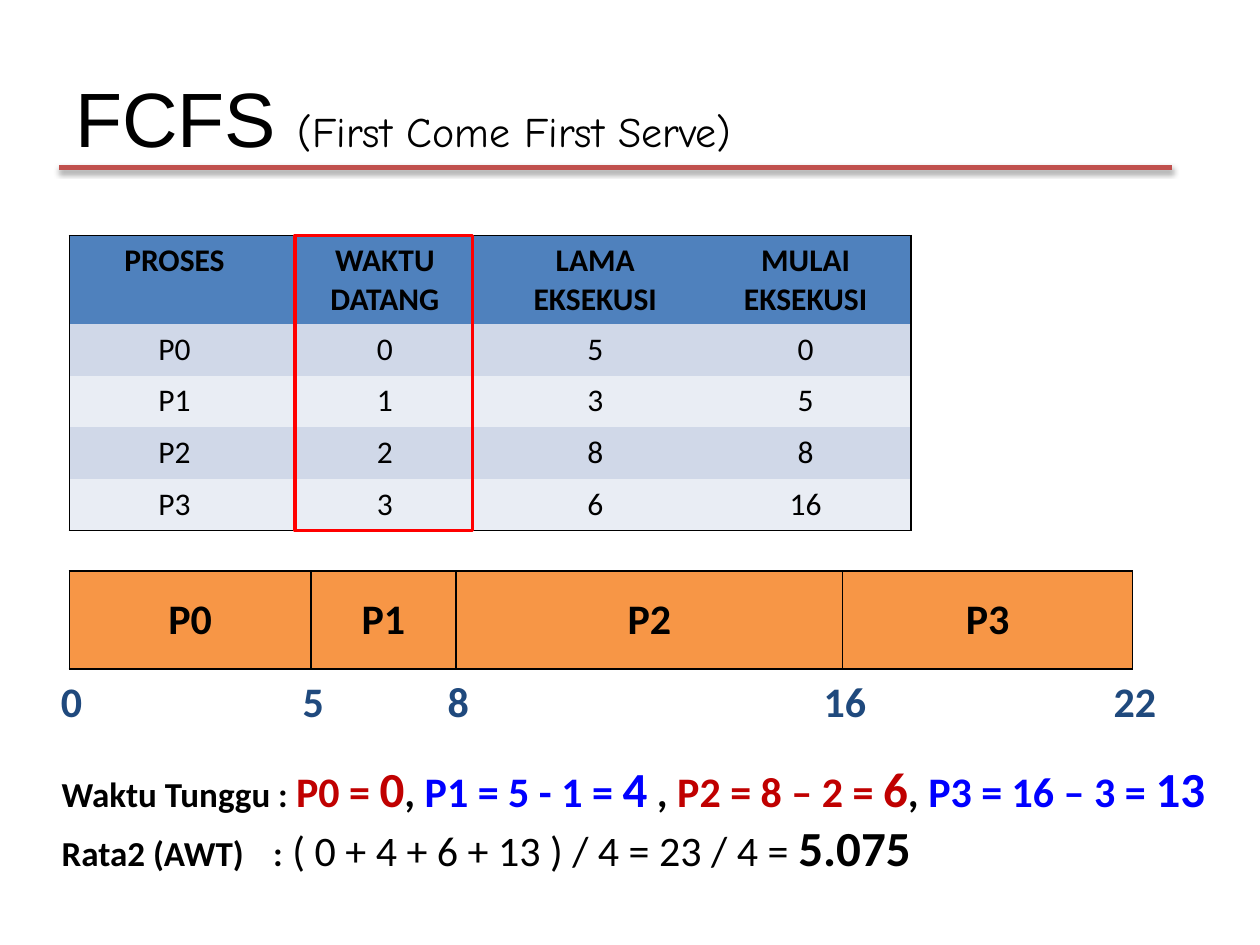
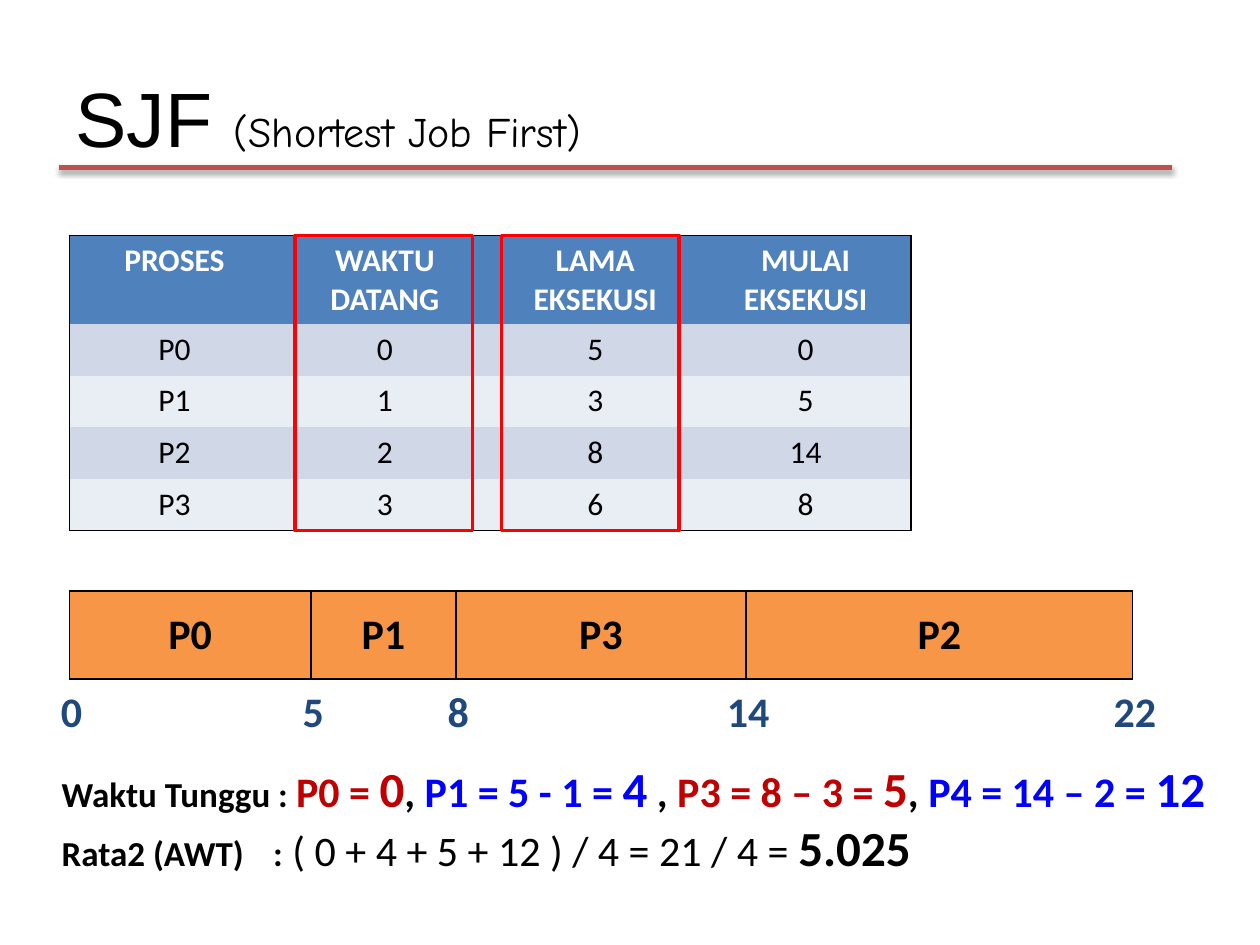
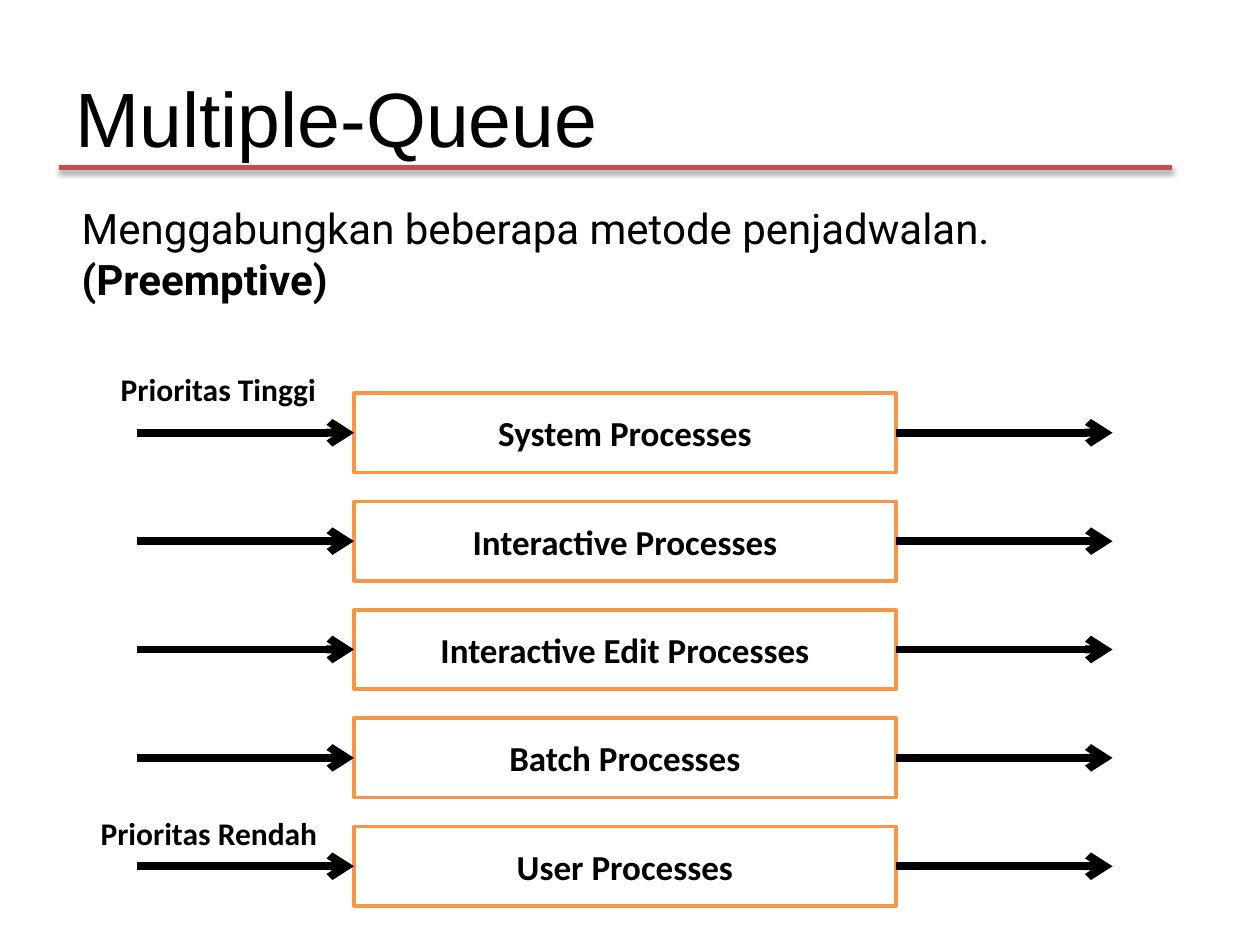
from itertools import accumulate

from lxml import etree
from pptx import Presentation
from pptx.dml.color import RGBColor
from pptx.enum.shapes import MSO_CONNECTOR, MSO_SHAPE
from pptx.enum.text import MSO_ANCHOR, PP_ALIGN
from pptx.oxml.ns import qn
from pptx.util import Inches, Pt

RECTANGLE = MSO_SHAPE.RECTANGLE
STRAIGHT = MSO_CONNECTOR.STRAIGHT
LEFT, CENTER = PP_ALIGN.LEFT, PP_ALIGN.CENTER
TOP, MIDDLE = MSO_ANCHOR.TOP, MSO_ANCHOR.MIDDLE

BLACK, WHITE = "000000", "FFFFFF"
RULE_RED, MARK_RED, WAIT_RED = "C0504D", "FF0000", "C00000"
HEADER_BLUE, TICK_BLUE, WAIT_BLUE = "4F81BD", "1F497D", "0000FF"
BANDS = ("D0D8E8", "E9EDF4")
ORANGE = "F79646"
BODY = "Calibri"

MARGIN = 0.55
TABLE_TOP = 1.87
HEADER_H, ROW_H, COLUMN_W = 0.7, 0.41, 1.67
GANTT_W = 8.44
HEADINGS = ("PROSES", "WAKTU DATANG", "LAMA EKSEKUSI", "MULAI EKSEKUSI")


def rgb(value):
    return RGBColor.from_string(value)


def add_run(paragraph, text, size, color=BLACK, bold=False, font=BODY):
    run = paragraph.add_run()
    run.text = text
    run.font.name = font
    run.font.size = Pt(size)
    run.font.bold = bold
    run.font.color.rgb = rgb(color)


def fill_frame(frame, paragraphs, align=LEFT, anchor=TOP):
    frame.vertical_anchor = anchor
    for index, runs in enumerate(paragraphs):
        paragraph = frame.add_paragraph() if index else frame.paragraphs[0]
        paragraph.alignment = align
        for run in runs:
            add_run(paragraph, *run)


def add_text(slide, box, paragraphs, wrap=True, anchor=TOP):
    label = slide.shapes.add_textbox(*map(Inches, box))
    label.text_frame.word_wrap = wrap
    fill_frame(label.text_frame, paragraphs, anchor=anchor)
    return label


def add_box(slide, box, line, fill=None):
    rect = slide.shapes.add_shape(RECTANGLE, *map(Inches, box))
    rect.shadow.inherit = False
    rect.line.color.rgb = rgb(line)
    rect.line.width = Pt(2)
    if fill:
        rect.fill.solid()
        rect.fill.fore_color.rgb = rgb(fill)
    else:
        rect.fill.background()
    return rect


def add_line(slide, start, end, color, width):
    line = slide.shapes.add_connector(STRAIGHT, *map(Inches, start + end))
    line.line.color.rgb = rgb(color)
    line.line.width = Pt(width)
    effects = etree.SubElement(line.element.spPr, qn("a:effectLst"))
    return line, effects


def add_arrow(slide, left, right, y):
    arrow, _ = add_line(slide, (left, y), (right, y), BLACK, 4.5)
    outline = arrow.element.spPr.find(qn("a:ln"))
    etree.SubElement(outline, qn("a:tailEnd"), type="arrow")


def add_title(slide, title, subtitle=""):
    runs = [(title, 44, BLACK, False, "Arial")]
    if subtitle:
        runs.append((subtitle, 24, BLACK, False, "Comic Neue"))
    add_text(slide, (0.5, 0.3, 9, 1.25), [runs], anchor=MIDDLE)
    _, effects = add_line(slide, (0.47, 1.33), (9.3, 1.33), RULE_RED, 3)
    shadow = etree.SubElement(effects, qn("a:outerShdw"), blurRad="40000",
                              dist="23000", dir="5400000", rotWithShape="0")
    tint = etree.SubElement(shadow, qn("a:srgbClr"), val=BLACK)
    etree.SubElement(tint, qn("a:alpha"), val="35000")


def style_cell(cell, fill, sides):
    properties = cell._tc.get_or_add_tcPr()
    for side in "LRTB":
        border = etree.SubElement(properties, qn("a:ln" + side), w=str(Pt(1)))
        if side in sides:
            paint = etree.SubElement(border, qn("a:solidFill"))
            etree.SubElement(paint, qn("a:srgbClr"), val=BLACK)
        else:
            etree.SubElement(border, qn("a:noFill"))
    cell.fill.solid()
    cell.fill.fore_color.rgb = rgb(fill)


def add_grid(slide, left, top, widths, heights):
    box = (left, top, sum(widths), sum(heights))
    grid = slide.shapes.add_table(len(heights), len(widths), *map(Inches, box)).table
    grid.first_row = grid.horz_banding = False
    for column, width in zip(grid.columns, widths):
        column.width = Inches(width)
    for row, height in zip(grid.rows, heights):
        row.height = Inches(height)
    return grid


def add_process_table(slide, processes, heading_color):
    rows = [HEADINGS] + processes
    last_row, last_column = len(rows) - 1, len(HEADINGS) - 1
    heights = [HEADER_H] + [ROW_H] * len(processes)
    grid = add_grid(slide, MARGIN, TABLE_TOP, [COLUMN_W] * len(HEADINGS), heights)
    for r, values in enumerate(rows):
        fill = BANDS[(r - 1) % 2] if r else HEADER_BLUE
        color = BLACK if r else heading_color
        for c, value in enumerate(values):
            sides = (("L" if c == 0 else "") + ("R" if c == last_column else "")
                     + ("T" if r == 0 else "") + ("B" if r == last_row else ""))
            cell = grid.cell(r, c)
            style_cell(cell, fill, sides)
            fill_frame(cell.text_frame, [[(str(value), 18, color, r == 0)]], CENTER)


def mark_column(slide, left):
    add_box(slide, (left, TABLE_TOP, 1.41, 2.34), MARK_RED)


def add_gantt(slide, top, height, bursts):
    ticks = [0] + list(accumulate(duration for _, duration in bursts))
    unit = GANTT_W / ticks[-1]
    widths = [duration * unit for _, duration in bursts]
    grid = add_grid(slide, MARGIN, top, widths, [height])
    for c, (process, _) in enumerate(bursts):
        cell = grid.cell(0, c)
        style_cell(cell, ORANGE, "LRTB")
        fill_frame(cell.text_frame, [[(process, 24, BLACK, True)]], CENTER)
        cell.vertical_anchor = MIDDLE
    for tick in ticks:
        width = 0.2 + 0.17 * len(str(tick))
        left = MARGIN + 0.02 + tick * unit - width / 2
        add_text(slide, (left, top + height, width, 0.5),
                 [[(str(tick), 24, TICK_BLUE, True)]], wrap=False)


def add_waiting_times(slide, waits, average_sum, average):
    waiting = [("Waktu Tunggu : ", 20, BLACK, True)]
    for index, (formula, result) in enumerate(waits):
        color = (WAIT_RED, WAIT_BLUE)[index % 2]
        if index:
            waiting.append((" , " if index == 2 else ", ", 24, BLACK, True))
        waiting += [(formula, 24, color, True), (result, 28, color, True)]
    mean = [("Rata2 (AWT)\t:", 20, BLACK, True), (average_sum, 24), (average, 28, BLACK, True)]
    label = add_text(slide, (0.39, 5.97, 9.38, 1.04), [waiting, mean])
    properties = label.text_frame.paragraphs[1]._p.get_or_add_pPr()
    tabs = etree.SubElement(properties, qn("a:tabLst"))
    etree.SubElement(tabs, qn("a:tab"), pos=str(Inches(1.68)), algn="l")


def add_queue(slide, top, process):
    left, width, height, reach = 2.81, 4.3, 0.63, 1.72
    queue = add_box(slide, (left, top, width, height), ORANGE, WHITE)
    fill_frame(queue.text_frame, [[(process, 20, BLACK, True)]], CENTER, MIDDLE)
    right, middle = left + width, top + height / 2
    add_arrow(slide, left - reach, left, middle)
    add_arrow(slide, right, right + reach, middle)


def build_fcfs(slide):
    add_title(slide, "FCFS ", "(First Come First Serve)")
    add_process_table(slide, [("P0", 0, 5, 0), ("P1", 1, 3, 5),
                              ("P2", 2, 8, 8), ("P3", 3, 6, 16)], BLACK)
    mark_column(slide, 2.34)
    add_gantt(slide, 4.53, 0.78, [("P0", 5), ("P1", 3), ("P2", 8), ("P3", 6)])
    add_waiting_times(slide, [("P0 = ", "0"), ("P1 = 5 - 1 = ", "4"),
                              ("P2 = 8 – 2 = ", "6"), ("P3 = 16 – 3 = ", "13")],
                      " ( 0 + 4 + 6 + 13 ) / 4 = 23 / 4 = ", "5.075")


def build_sjf(slide):
    add_title(slide, "SJF ", "(Shortest Job First)")
    add_process_table(slide, [("P0", 0, 5, 0), ("P1", 1, 3, 5),
                              ("P2", 2, 8, 14), ("P3", 3, 6, 8)], WHITE)
    for left in (3.98, 2.34):
        mark_column(slide, left)
    add_gantt(slide, 4.69, 0.7, [("P0", 5), ("P1", 3), ("P3", 6), ("P2", 8)])
    add_waiting_times(slide, [("P0 = ", "0"), ("P1 = 5 - 1 = ", "4"),
                              ("P3 = 8 – 3 = ", "5"), ("P4 = 14 – 2 = ", "12")],
                      " ( 0 + 4 + 5 + 12 ) / 4 = 21 / 4 = ", "5.025")


def build_multiple_queue(slide):
    add_title(slide, "Multiple-Queue")
    queues = ("System", "Interactive", "Interactive Edit", "Batch", "User")
    for index, kind in enumerate(queues):
        add_queue(slide, 3.12 + 0.86 * index, kind + " Processes")
    for box, priority in (((0.86, 2.89, 1.76, 0.4), "Prioritas Tinggi"),
                          ((0.7, 6.41, 1.93, 0.4), "Prioritas Rendah")):
        add_text(slide, box, [[(priority, 18, BLACK, True)]], wrap=False)
    summary = add_text(slide, (MARGIN, 1.56, 8.83, 0.91), [
        [("Menggabungkan beberapa metode penjadwalan.", 24, BLACK, False, "Roboto")],
        [("(Preemptive)", 24, BLACK, True, "Roboto")]])
    summary.fill.solid()
    summary.fill.fore_color.rgb = rgb(WHITE)


def main():
    deck = Presentation()
    deck.slide_width, deck.slide_height = Inches(10), Inches(7.5)
    blank = deck.slide_layouts[6]
    for build in (build_fcfs, build_sjf, build_multiple_queue):
        build(deck.slides.add_slide(blank))
    deck.save("out.pptx")


if __name__ == "__main__":
    main()
